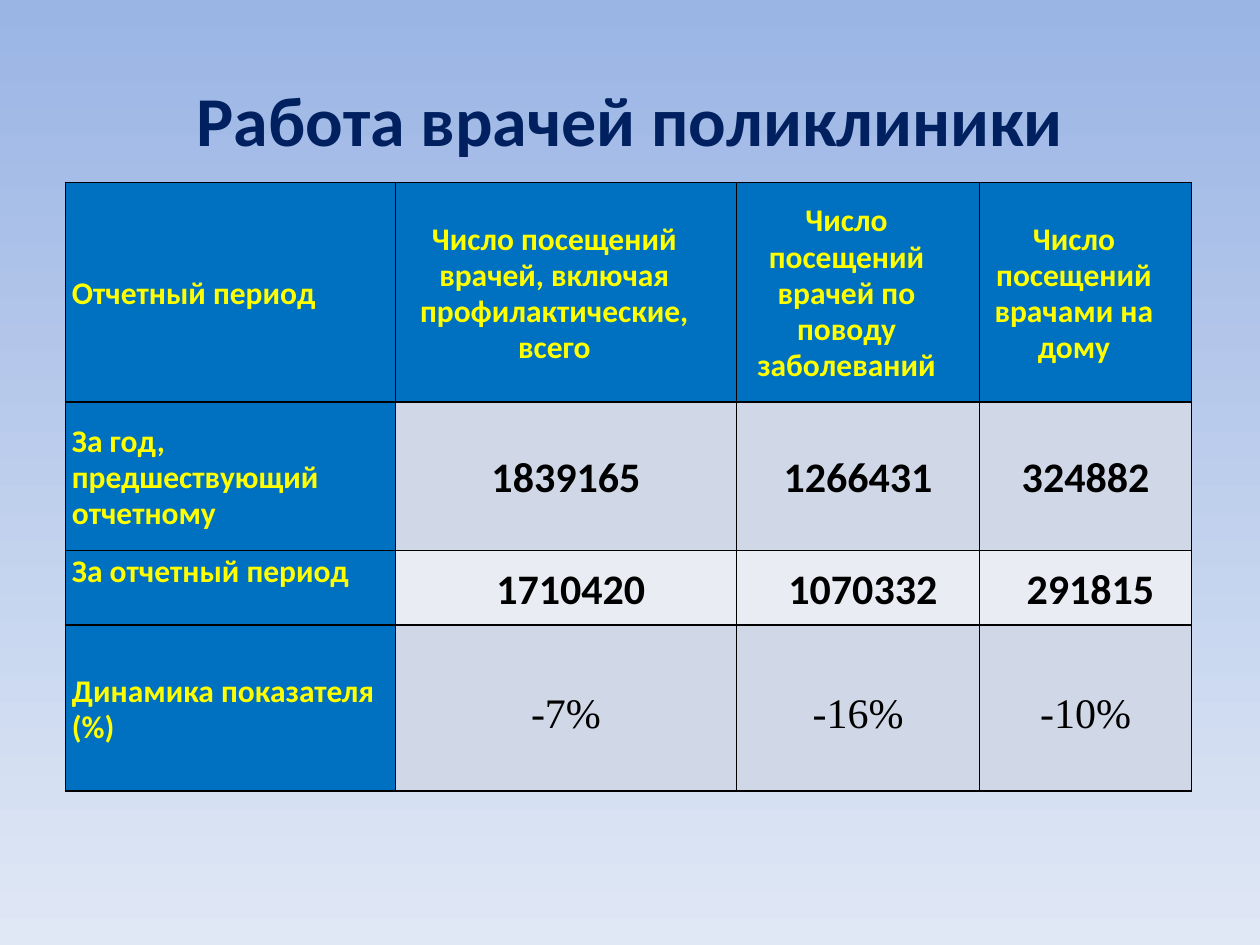
"""Build a slide with a table of visits to polyclinic doctors."""
import dataclasses

import lxml.etree
import pptx
import pptx.dml.color
import pptx.enum.text
import pptx.oxml.ns
import pptx.util

Cm = pptx.util.Cm
Align = pptx.enum.text.PP_ALIGN
Anchor = pptx.enum.text.MSO_ANCHOR


@dataclasses.dataclass(frozen=True)
class Theme:
    font: str = "Calibri"
    number_font: str = "Times New Roman"
    title_color: str = "002060"
    label_color: str = "FFFF00"
    label_fill: str = "0070C0"
    number_color: str = "000000"
    border_color: str = "000000"
    row_fills: tuple = ("D0D8E7", "E9ECF3")
    background: tuple = ("9AB4E4", "E0E8F5")
    title_size: int = 40
    label_size: int = 18
    number_size: int = 24
    border_width: int = 1


def rgb(value):
    return pptx.dml.color.RGBColor.from_string(value)


def write_text(paragraph, text, *, size, color, font, bold=True, align=Align.CENTER, spacing=1.0):
    paragraph.text = text
    paragraph.alignment = align
    paragraph.line_spacing = spacing
    for run in paragraph.runs:
        run.font.size = pptx.util.Pt(size)
        run.font.name = font
        run.font.bold = bold
        run.font.color.rgb = rgb(color)


class SlideBuilder:
    def __init__(self, slide, theme):
        self.slide = slide
        self.theme = theme

    def background(self):
        fill = self.slide.background.fill
        fill.gradient()
        fill.gradient_angle = 270
        for stop, color in zip(fill.gradient_stops, self.theme.background):
            stop.color.rgb = rgb(color)

    def title(self, text, left, top, width, height):
        shape = self.slide.shapes.add_textbox(Cm(left), Cm(top), Cm(width), Cm(height))
        frame = shape.text_frame
        frame.word_wrap = True
        frame.vertical_anchor = Anchor.MIDDLE
        write_text(frame.paragraphs[0], text, size=self.theme.title_size,
                   color=self.theme.title_color, font=self.theme.font)

    def borders(self, cell):
        properties = cell._tc.get_or_add_tcPr()
        qn = pptx.oxml.ns.qn
        for side in ("a:lnL", "a:lnR", "a:lnT", "a:lnB"):
            line = lxml.etree.SubElement(properties, qn(side),
                                         w=str(pptx.util.Pt(self.theme.border_width)))
            fill = lxml.etree.SubElement(line, qn("a:solidFill"))
            lxml.etree.SubElement(fill, qn("a:srgbClr"), val=self.theme.border_color)

    def cell(self, cell, text, fill, *, anchor=Anchor.MIDDLE, top=0.05, right=0.13, **text_format):
        self.borders(cell)
        cell.fill.solid()
        cell.fill.fore_color.rgb = rgb(fill)
        cell.vertical_anchor = anchor
        cell.margin_left, cell.margin_right = Cm(0.13), Cm(right)
        cell.margin_top, cell.margin_bottom = Cm(top), Cm(0)
        write_text(cell.text_frame.paragraphs[0], text, **text_format)

    def table(self, rows, left, top, widths, heights):
        theme = self.theme
        shape = self.slide.shapes.add_table(len(rows), len(widths), Cm(left), Cm(top),
                                            Cm(sum(widths)), Cm(sum(heights)))
        table = shape.table
        for column, width in zip(table.columns, widths):
            column.width = Cm(width)
        for row, height in zip(table.rows, heights):
            row.height = Cm(height)

        label = dict(size=theme.label_size, color=theme.label_color, font=theme.font, spacing=0.94)
        count = dict(size=theme.number_size, color=theme.number_color, font=theme.font,
                     spacing=0.94, top=0.08)
        change = dict(count, font=theme.number_font, bold=False, spacing=0.8, top=0.36)
        for row_index, texts in enumerate(rows):
            for column_index, text in enumerate(texts):
                cell = table.cell(row_index, column_index)
                if column_index == 0:
                    anchor = Anchor.TOP if row_index == 2 else Anchor.MIDDLE
                    self.cell(cell, text, theme.label_fill, anchor=anchor, align=Align.LEFT, **label)
                elif row_index == 0:
                    self.cell(cell, text, theme.label_fill, right=0.6, **label)
                else:
                    number = change if row_index == len(rows) - 1 else count
                    self.cell(cell, text, theme.row_fills[(row_index - 1) % 2], **number)


def main():
    presentation = pptx.Presentation()
    presentation.slide_width, presentation.slide_height = Cm(25.4), Cm(19.05)
    slide = presentation.slides.add_slide(presentation.slide_layouts[6])
    builder = SlideBuilder(slide, Theme())
    builder.background()
    builder.title("Работа врачей поликлиники", 1.27, 0.8, 22.86, 3.18)
    rows = [
        ("Отчетный период",
         "Число посещений\vврачей, включая\vпрофилактические,\vвсего",
         "Число\vпосещений\vврачей по\vповоду\vзаболеваний",
         "Число\vпосещений\vврачами на\vдому"),
        ("За год, предшествующий отчетному", "1839165", "1266431", "324882"),
        ("За отчетный период", " 1710420", " 1070332", " 291815"),
        ("Динамика показателя (%)", "-7%", "-16%", "-10%"),
    ]
    builder.table(rows, 1.32, 3.68, (6.65, 6.88, 4.9, 4.27), (4.42, 3, 1.5, 3.35))
    presentation.save("out.pptx")


if __name__ == "__main__":
    main()
